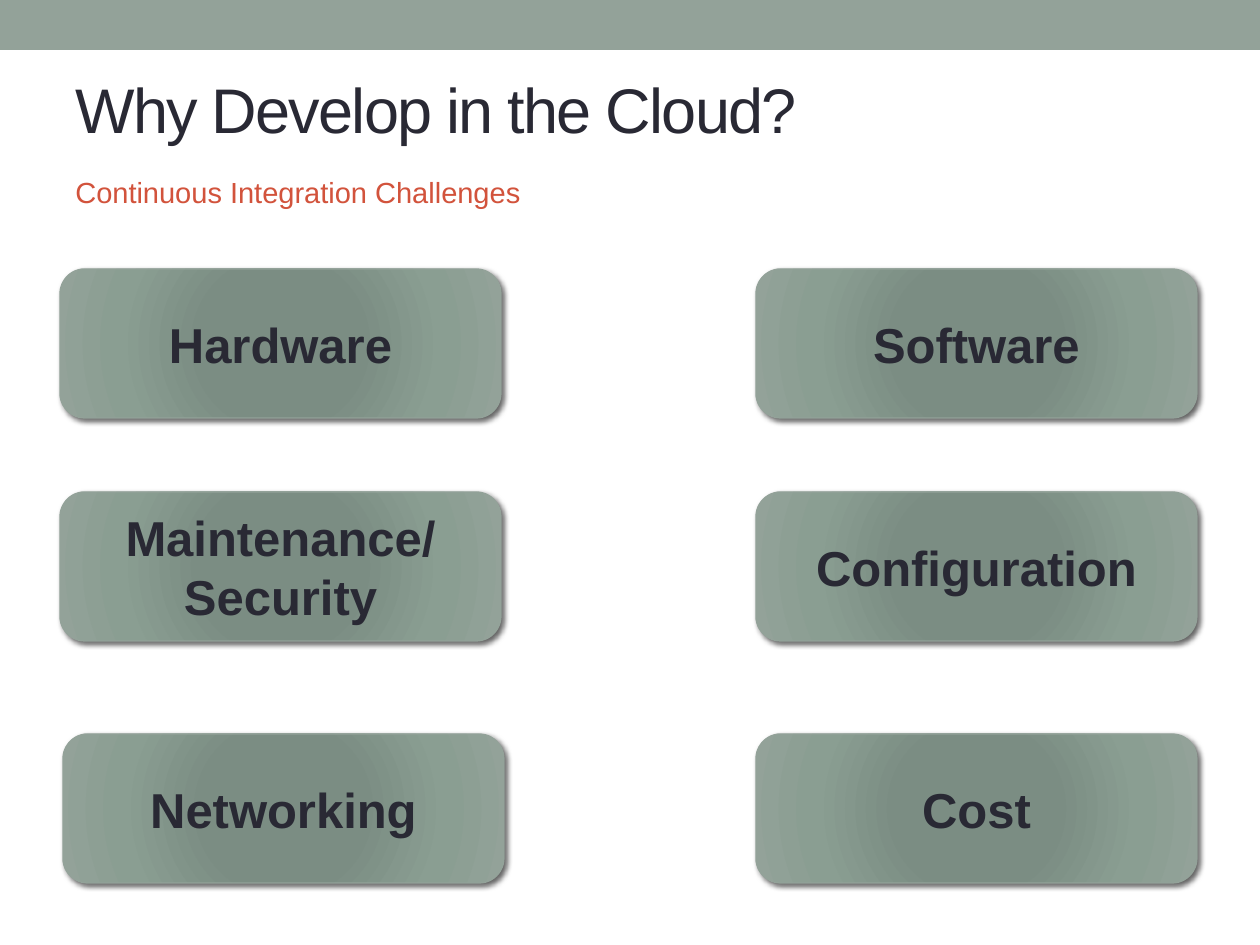
from dataclasses import dataclass

from pptx import Presentation
from pptx import util as u
from pptx.dml import color
from pptx.enum import shapes, text
from pptx.oxml import parse_xml
from pptx.oxml import ns

PX = u.Inches(1) / 126


@dataclass(frozen=True)
class Theme:
    font: str = "Arial"
    ink: str = "292934"
    sage: str = "93A299"
    rust: str = "D2533C"
    stops: tuple = ((0, "7B8E82"), (34, "7B8D83"), (70, "8A9E92"), (100, "93A299"))
    title: float = 36
    sub: float = 16.6
    card: float = 28


def rgb(code):
    return color.RGBColor.from_string(code)


def emu(*vals):
    return [u.Emu(round(v * PX)) for v in vals]


class Deck:
    def __init__(self, theme):
        self.theme = theme
        self.prs = Presentation()
        self.prs.slide_width, self.prs.slide_height = emu(1260, 945)
        self.slide = self.prs.slides.add_slide(self.prs.slide_layouts[6])

    def put_text(self, shape, words, size, ink, bold=False, mid=True):
        frame = shape.text_frame
        frame.word_wrap = True
        frame.vertical_anchor = text.MSO_ANCHOR.MIDDLE if mid else text.MSO_ANCHOR.TOP
        para = frame.paragraphs[0]
        para.text = words
        font = para.font
        font.name, font.size, font.bold = self.theme.font, u.Pt(size), bold
        font.color.rgb = rgb(ink)
        return para

    def label(self, box, words, size, ink, mid=True, track=0):
        shape = self.slide.shapes.add_textbox(*emu(*box))
        para = self.put_text(shape, words, size, ink, mid=mid)
        if track:
            para.runs[0]._r.get_or_add_rPr().set("spc", str(track))

    def band(self, box):
        shape = self.slide.shapes.add_shape(shapes.MSO_SHAPE.RECTANGLE, *emu(*box))
        shape.shadow.inherit = False
        shape.fill.solid()
        shape.fill.fore_color.rgb = rgb(self.theme.sage)
        shape.line.fill.background()

    def card(self, box, words):
        shape = self.slide.shapes.add_shape(
            shapes.MSO_SHAPE.ROUNDED_RECTANGLE, *emu(*box))
        shape.line.color.rgb = rgb(self.theme.sage)
        shape.line.width = u.Pt(0.75)
        self.glow(shape)
        self.shade(shape)
        para = self.put_text(shape, words, self.theme.card, self.theme.ink, bold=True)
        para.alignment = text.PP_ALIGN.CENTER

    def glow(self, shape):
        """Radial fill, dark at the centre."""
        stops = "".join(
            f'<a:gs pos="{pos * 1000}"><a:srgbClr val="{code}"/></a:gs>'
            for pos, code in self.theme.stops)
        fill = parse_xml(
            f'<a:gradFill {ns.nsdecls("a")} rotWithShape="1"><a:gsLst>{stops}</a:gsLst>'
            '<a:path path="circle"><a:fillToRect l="100000" t="100000" r="100000"'
            ' b="100000"/></a:path></a:gradFill>')
        shape._element.spPr.find(ns.qn("a:prstGeom")).addnext(fill)

    def shade(self, shape):
        """Soft shadow to the lower right."""
        shape.shadow.inherit = False
        drop = parse_xml(
            f'<a:outerShdw {ns.nsdecls("a")} blurRad="{u.Pt(3)}" dist="{u.Pt(2)}"'
            ' dir="2700000" algn="tl" rotWithShape="0"><a:srgbClr val="000000">'
            '<a:alpha val="60000"/></a:srgbClr></a:outerShdw>')
        shape._element.spPr.find(ns.qn("a:effectLst")).append(drop)


def main():
    theme = Theme()
    deck = Deck(theme)

    # Top band and headings
    deck.band((0, 0, 1260, 50))
    deck.label((63, 62, 1134, 93), "Why Develop in the Cloud?",
               theme.title, theme.ink, track=-100)
    deck.label((63, 168, 1134, 42), "Continuous Integration Challenges",
               theme.sub, theme.rust, mid=False)

    # Challenge cards: left edge, top, then the pair of words
    rows = (
        (60, 269, "Hardware", "Software"),
        (60, 492, "Maintenance/Security", "Configuration"),
        (63, 734, "Networking", "Cost"),
    )
    for left, top, first, second in rows:
        for x, words in ((left, first), (756, second)):
            deck.card((x, top, 441, 149), words)

    deck.prs.save("out.pptx")


if __name__ == "__main__":
    main()
